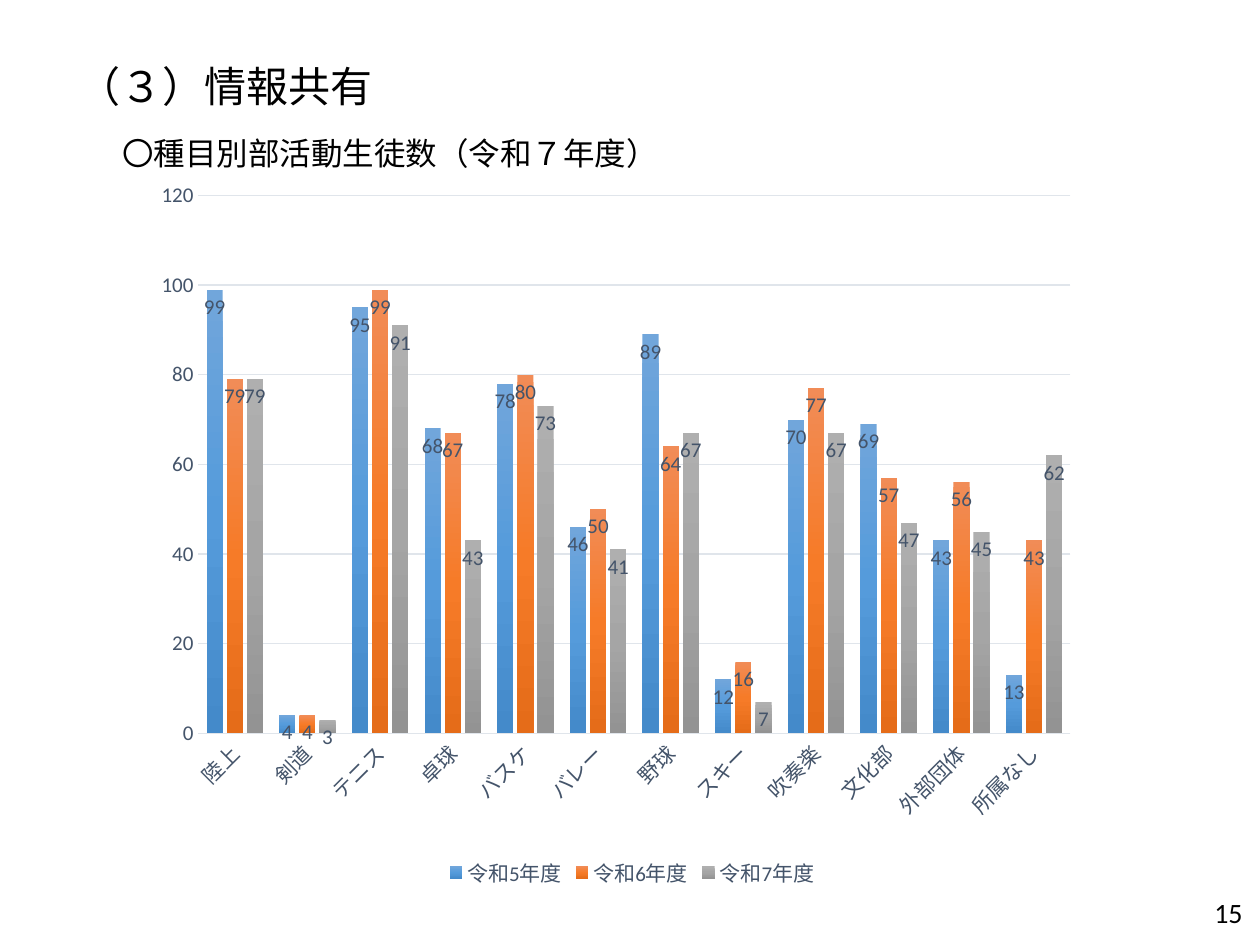
from copy import deepcopy

from lxml import etree
from pptx import Presentation
from pptx.chart.data import CategoryChartData
from pptx.dml.color import RGBColor
from pptx.enum.chart import XL_CHART_TYPE, XL_LABEL_POSITION, XL_LEGEND_POSITION, XL_TICK_MARK
from pptx.enum.text import MSO_ANCHOR, PP_ALIGN
from pptx.oxml.ns import qn
from pptx.util import Cm, Pt

COLUMNS = XL_CHART_TYPE.COLUMN_CLUSTERED
INSIDE_END = XL_LABEL_POSITION.INSIDE_END
BOTTOM = XL_LEGEND_POSITION.BOTTOM
NO_TICK = XL_TICK_MARK.NONE
TOP, MIDDLE = MSO_ANCHOR.TOP, MSO_ANCHOR.MIDDLE
LEFT, RIGHT = PP_ALIGN.LEFT, PP_ALIGN.RIGHT

FONT = "Calibri"
BLACK = RGBColor(0x00, 0x00, 0x00)
SLATE = RGBColor(0x44, 0x54, 0x6A)
PALE = RGBColor(0xE0, 0xE5, 0xEB)
BLUES = (RGBColor(0x71, 0xA6, 0xDB), RGBColor(0x55, 0x9B, 0xDB), RGBColor(0x44, 0x8A, 0xCA))
ORANGES = (RGBColor(0xF1, 0x8C, 0x57), RGBColor(0xF6, 0x7B, 0x28), RGBColor(0xE5, 0x6C, 0x19))
GREYS = (RGBColor(0xAF, 0xAF, 0xAF), RGBColor(0xA5, 0xA5, 0xA5), RGBColor(0x93, 0x93, 0x93))

CLUBS = ("陸上", "剣道", "テニス", "卓球", "バスケ", "バレー",
         "野球", "スキー", "吹奏楽", "文化部", "外部団体", "所属なし")
MEMBERS = {
    "令和5年度": (BLUES, (99, 4, 95, 68, 78, 46, 89, 12, 70, 69, 43, 13)),
    "令和6年度": (ORANGES, (79, 4, 99, 67, 80, 50, 64, 16, 77, 57, 56, 43)),
    "令和7年度": (GREYS, (79, 3, 91, 43, 73, 41, 67, 7, 67, 47, 45, 62)),
}
PLOT_AREA = {"x": 0.063, "y": 0.023, "w": 0.879, "h": 0.753}


def apply(target, values):
    for name, value in values.items():
        setattr(target, name, value)


class SlideWriter:
    """Holds the style and the current slide."""

    def __init__(self, slide):
        self.slide = slide

    def style_font(self, font, size, color):
        apply(font, {"name": FONT, "size": Pt(size)})
        font.color.rgb = color

    def text(self, words, box, size, align=LEFT, anchor=MIDDLE, insets=(0.18, 0.1), before=0):
        frame = self.slide.shapes.add_textbox(*map(Cm, box)).text_frame
        across, down = map(Cm, insets)
        apply(frame, {"word_wrap": True, "vertical_anchor": anchor,
                      "margin_left": across, "margin_right": across,
                      "margin_top": down, "margin_bottom": down})
        paragraph = frame.paragraphs[0]
        apply(paragraph, {"alignment": align, "line_spacing": 0.9, "space_before": Pt(before)})
        run = paragraph.add_run()
        run.text = words
        self.style_font(run.font, size, BLACK)

    def column_chart(self, categories, series_values, box):
        data = CategoryChartData()
        data.categories = categories
        for name, (_, values) in series_values.items():
            data.add_series(name, values)
        chart = self.slide.shapes.add_chart(COLUMNS, *map(Cm, box), data).chart
        apply(chart, {"has_title": False, "has_legend": True})
        self.style_font(chart.font, 10, BLACK)
        apply(chart.legend, {"position": BOTTOM, "include_in_layout": False})
        self.style_font(chart.legend.font, 12, SLATE)

        plot = chart.plots[0]
        apply(plot, {"gap_width": 100, "overlap": -24, "vary_by_categories": False})
        for series, (colors, _) in zip(plot.series, series_values.values()):
            self.gradient(series, colors)
            self.value_labels(series)
        self.axes(chart)
        self.place_plot(chart)

    def gradient(self, series, colors):
        fill = series.format.fill
        fill.gradient()
        fill.gradient_angle = 270
        stop_list = series._element.find(".//" + qn("a:gsLst"))
        stop_list.append(deepcopy(stop_list[-1]))
        for stop, color, position in zip(fill.gradient_stops, colors, (0, 0.5, 1)):
            stop.color.rgb = color
            stop.position = position

    def value_labels(self, series):
        labels = series.data_labels
        apply(labels, {"show_value": True, "position": INSIDE_END})
        self.style_font(labels.font, 12, SLATE)

    def axes(self, chart):
        clubs, counts = chart.category_axis, chart.value_axis
        for axis in (clubs, counts):
            apply(axis, {"major_tick_mark": NO_TICK, "minor_tick_mark": NO_TICK})
            self.style_font(axis.tick_labels.font, 12, SLATE)
        apply(counts, {"minimum_scale": 0, "maximum_scale": 120, "major_unit": 20,
                       "has_major_gridlines": True})
        counts.format.line.fill.background()
        for line in (clubs.format.line, counts.major_gridlines.format.line):
            line.color.rgb = PALE
            line.width = Pt(0.75)

    def place_plot(self, chart):
        area = chart._chartSpace.find(".//" + qn("c:plotArea"))
        for old in area.findall(qn("c:layout")):
            area.remove(old)
        layout = etree.Element(qn("c:layout"))
        area.insert(0, layout)
        manual = etree.SubElement(layout, qn("c:manualLayout"))
        settings = {"layoutTarget": "inner", "xMode": "edge", "yMode": "edge", **PLOT_AREA}
        for tag, value in settings.items():
            etree.SubElement(manual, qn("c:" + tag)).set("val", str(value))


def main():
    deck = Presentation()
    apply(deck, {"slide_width": Cm(25.4), "slide_height": Cm(19.05)})
    writer = SlideWriter(deck.slides.add_slide(deck.slide_layouts[6]))

    # Page number
    writer.text("15", (24, 18.01, 1.3, 0.99), 16, RIGHT, TOP, (0.25, 0.13), before=10)

    # Headings
    writer.text("（３）情報共有", (1.4, 0.97, 21.9, 1.63), 24)
    writer.text("〇種目別部活動生徒数（令和７年度）", (2.29, 2.31, 21.9, 1.63), 18)

    # Members of each club by year
    writer.column_chart(CLUBS, MEMBERS, (2.74, 3.61, 20, 14.4))

    deck.save("out.pptx")


if __name__ == "__main__":
    main()
